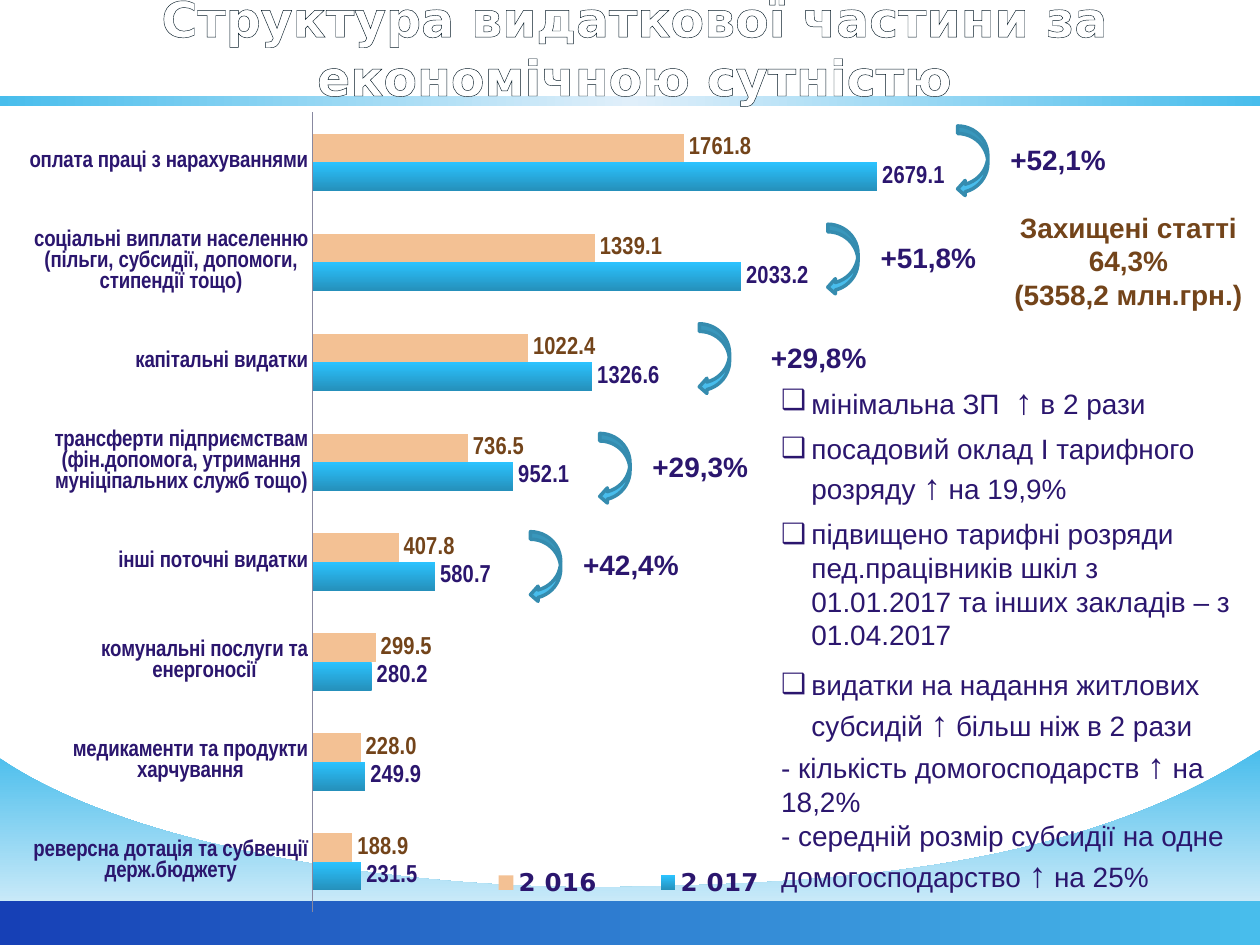
"""Build the slide on the structure of expenditure by economic nature."""
from dataclasses import dataclass

from lxml import etree
from pptx import Presentation
from pptx import util as u
from pptx.chart.data import CategoryChartData
from pptx.dml.color import RGBColor
from pptx.enum import chart as ch, shapes, text
from pptx.oxml.ns import qn


@dataclass(frozen=True)
class Theme:
    """Colours, fonts and type sizes."""
    navy: str = "2B166E"
    brown: str = "73441A"
    sky: str = "48BDEC"
    pale: str = "EEF6FC"
    mist: str = "E0EFFA"
    royal: str = "1640B6"
    peach: str = "F3C194"
    bar_top: str = "2BC3FF"
    bar_bottom: str = "2590BB"
    teal: str = "358CAF"
    axis: str = "8888A0"
    white: str = "FFFFFF"
    ink: str = "051925"
    sans: str = "Arial"
    narrow: str = "Arial Narrow"
    display: str = "DejaVu Sans"
    title: int = 28
    text: int = 16
    arrow: int = 20
    value: int = 14
    category: int = 13


@dataclass(frozen=True)
class Growth:
    """A growth rate with its curved arrow."""
    rate: str
    left: float
    top: float
    gap: float = 0.48


@dataclass(frozen=True)
class Item:
    """A paragraph of the list of reasons."""
    words: str
    bullet: bool = True
    before: float = 0


T = Theme()
GROWTHS = [
    Growth("+52,1%", 7.44, 1.16),
    Growth("+51,8%", 6.41, 1.94),
    Growth("+29,8%", 5.39, 2.73, 0.63),
    Growth("+29,3%", 4.6, 3.6),
    Growth("+42,4%", 4.05, 4.38),
]
ITEMS = [
    Item("мінімальна ЗП  ↑ в 2 рази"),
    Item("посадовий оклад І тарифного розряду ↑ на 19,9%", before=5.75),
    Item("підвищено тарифні розряди пед.працівників шкіл з 01.01.2017 "
         "та інших закладів – з 01.04.2017", before=5.75),
    Item("видатки на надання житлових субсидій ↑ більш ніж в 2 рази", before=9.2),
    Item("- кількість домогосподарств ↑ на 18,2%", False),
    Item("- середній розмір субсидії на одне домогосподарство ↑ на 25%", False),
]
SPENDING = [
    ("реверсна дотація та субвенції держ.бюджету", 231.5, 188.9),
    ("медикаменти та продукти харчування", 249.9, 228.0),
    ("комунальні послуги та енергоносії", 280.2, 299.5),
    ("інші поточні видатки", 580.7, 407.8),
    ("трансферти підприємствам (фін.допомога, утримання муніціпальних служб тощо)", 952.1, 736.5),
    ("капітальні видатки", 1326.6, 1022.4),
    ("соціальні виплати населенню (пільги, субсидії, допомоги, стипендії тощо)", 2033.2, 1339.1),
    ("оплата праці з нарахуваннями", 2679.1, 1761.8),
]


def rgb(code: str) -> RGBColor:
    """Turn a hex code into a colour."""
    return RGBColor.from_string(code)


def style(font, size: float, color: str, name: str, bold: bool = False) -> None:
    """Format a font."""
    font.size, font.name, font.bold = u.Pt(size), name, bold
    font.color.rgb = rgb(color)


def add_run(p, words: str, size: float, color: str, name: str = T.sans, bold: bool = False):
    """Add one formatted run."""
    r = p.add_run()
    r.text = words
    style(r.font, size, color, name, bold)
    return r


def shade(fill, host, colors: list[str], down: bool = False) -> None:
    """Give a fill evenly spaced gradient stops."""
    fill.gradient()
    fill.gradient_angle = 270 if down else 0
    stops = next(host.iter(qn("a:gsLst")))
    for old in list(stops):
        stops.remove(old)
    for i, color in enumerate(colors):
        gs = etree.SubElement(stops, qn("a:gs"), pos=str(100000 * i // (len(colors) - 1)))
        etree.SubElement(gs, qn("a:srgbClr"), val=color)


def place(sp, left: float, top: float, width: float, height: float) -> None:
    """Set the frame of a shape."""
    sp.left, sp.top = u.Inches(left), u.Inches(top)
    sp.width, sp.height = u.Inches(width), u.Inches(height)


def bezier(a, b, c, d, steps: int = 40) -> list[tuple[float, float]]:
    """Sample a cubic curve after its start point."""
    ts = [i / steps for i in range(1, steps + 1)]
    return [tuple((1 - t) ** 3 * a[k] + 3 * t * (1 - t) ** 2 * b[k]
                  + 3 * t * t * (1 - t) * c[k] + t ** 3 * d[k] for k in (0, 1)) for t in ts]


def add_band(s, top: float, height: float, colors: list[str]) -> None:
    """Draw a full-width gradient band."""
    sp = s.shapes.add_shape(shapes.MSO_SHAPE.RECTANGLE, 0, u.Inches(top), u.Inches(10), u.Inches(height))
    sp.shadow.inherit = False
    sp.line.fill.background()
    shade(sp.fill, sp.element, colors)


def add_backdrop(s) -> None:
    """Draw the wave and the two bands."""
    right, middle, left = (10, 5.95), (4.92, 7.04), (0, 6.02)
    points = [right, *bezier(right, (8.49, 6.95), (6.42, 7.01), middle),
              *bezier(middle, (3.42, 7.07), (1.11, 6.78), left), (0, 7.5)]
    fb = s.shapes.build_freeform(u.Inches(10), u.Inches(7.5), scale=1.0)
    fb.add_line_segments([(u.Inches(x), u.Inches(y)) for x, y in points])
    sp = fb.convert_to_shape()
    sp.shadow.inherit = False
    sp.line.fill.background()
    shade(sp.fill, sp.element, [T.sky, T.pale], down=True)
    add_band(s, 7.15, 0.35, [T.royal, T.sky])
    add_band(s, 0.76, 0.08, [T.sky, T.mist, T.sky])


def set_layout(host, x: float, y: float, w: float, h: float, inner: bool = False) -> None:
    """Place a chart part by fractions of the chart."""
    for old in host.findall(qn("c:layout")):
        host.remove(old)
    layout = etree.Element(qn("c:layout"))
    manual = etree.SubElement(layout, qn("c:manualLayout"))
    values = [("layoutTarget", "inner")] if inner else []
    values += [("xMode", "edge"), ("yMode", "edge"), ("x", x), ("y", y), ("w", w), ("h", h)]
    for tag, value in values:
        etree.SubElement(manual, qn(f"c:{tag}"), val=str(value))
    host.insert(0 if inner else 1, layout)


def add_spending_chart(s) -> None:
    """Draw the bars of both years."""
    names, now, before = zip(*SPENDING)
    data = CategoryChartData(number_format="0.0")
    data.categories = names
    data.add_series("2 017", now)
    data.add_series("2 016", before)
    chart = s.shapes.add_chart(ch.XL_CHART_TYPE.BAR_CLUSTERED, u.Inches(0.12), u.Inches(0.76),
                               u.Inches(7.38), u.Inches(6.61), data).chart
    style(chart.font, 18, T.navy, T.display)
    chart.has_title = False
    value, category = chart.value_axis, chart.category_axis
    value.minimum_scale, value.maximum_scale = 0, 3000
    value.has_major_gridlines = value.visible = False
    category.major_tick_mark = ch.XL_TICK_MARK.NONE
    category.format.line.color.rgb = rgb(T.axis)
    style(category.tick_labels.font, T.category, T.navy, T.narrow, True)
    plot = chart.plots[0]
    plot.gap_width, plot.overlap, plot.vary_by_categories = 150, 0, False
    for series, color in zip(plot.series, (T.navy, T.brown)):
        labels = series.data_labels
        labels.show_value = True
        labels.number_format, labels.number_format_is_linked = "0.0", False
        labels.position = ch.XL_LABEL_POSITION.OUTSIDE_END
        style(labels.font, T.value, color, T.narrow, True)
    current, previous = plot.series
    shade(current.format.fill, current._element, [T.bar_top, T.bar_bottom], down=True)
    previous.format.fill.solid()
    previous.format.fill.fore_color.rgb = rgb(T.peach)
    chart.has_legend = True
    legend = chart.legend
    legend.position, legend.include_in_layout = ch.XL_LEGEND_POSITION.TOP, False
    style(legend.font, T.value, T.navy, T.display, True)
    set_layout(next(chart.element.iter(qn("c:plotArea"))), 0.32, 0.02, 0.68, 0.96, inner=True)
    set_layout(legend.element if hasattr(legend, "element") else legend._element, 0.46, 0.92, 0.4, 0.05)


def add_label(s, left: float, top: float, width: float, height: float, lines: list[str],
              color: str, align) -> None:
    """Add a bold text box."""
    sp = s.shapes.add_textbox(0, 0, 0, 0)
    place(sp, left, top, width, height)
    tf = sp.text_frame
    tf.word_wrap = True
    for i, line in enumerate(lines):
        p = tf.add_paragraph() if i else tf.paragraphs[0]
        p.alignment = align
        add_run(p, line, T.text, color, bold=True)


def add_growth(s, growth: Growth) -> None:
    """Draw a curved arrow and its rate."""
    sp = s.shapes.add_shape(shapes.MSO_SHAPE.CURVED_DOWN_ARROW, 0, 0, 0, 0)
    place(sp, growth.left, growth.top, 0.56, 0.24)
    sp.rotation = 90
    sp.shadow.inherit = False
    sp.fill.solid()
    sp.fill.fore_color.rgb = rgb(T.sky)
    sp.line.color.rgb = rgb(T.teal)
    sp.line.width = u.Pt(2)
    add_label(s, growth.left + growth.gap, growth.top - 0.08, 1.02, 0.37, [growth.rate],
              T.navy, text.PP_ALIGN.LEFT)


def fill_title(sp) -> None:
    """Write the outlined title."""
    place(sp, 0.23, 0, 9.61, 0.84)
    tf = sp.text_frame
    tf.margin_left = tf.margin_right = tf.margin_bottom = 0
    tf.vertical_anchor, tf.auto_size = text.MSO_ANCHOR.BOTTOM, text.MSO_AUTO_SIZE.NONE
    p = tf.paragraphs[0]
    p.alignment = text.PP_ALIGN.CENTER
    r = add_run(p, "Структура видаткової частини за економічною сутністю", T.title, T.white, T.display, True)
    ln = etree.Element(qn("a:ln"), w=str(u.Pt(0.75)))
    etree.SubElement(etree.SubElement(ln, qn("a:solidFill")), qn("a:srgbClr"), val=T.ink)
    r.font._element.insert(0, ln)


def fill_reasons(sp) -> None:
    """Write the list of reasons."""
    place(sp, 6.1, 2.96, 3.78, 4.2)
    tf = sp.text_frame
    tf.vertical_anchor, tf.auto_size = text.MSO_ANCHOR.TOP, text.MSO_AUTO_SIZE.NONE
    for i, item in enumerate(ITEMS):
        p = tf.add_paragraph() if i else tf.paragraphs[0]
        p.space_before = u.Pt(item.before)
        pPr = p._p.get_or_add_pPr()
        hang = u.Inches(0.24) if item.bullet else 0
        pPr.set("marL", str(hang))
        pPr.set("indent", str(-hang))
        if item.bullet:
            etree.SubElement(pPr, qn("a:buFont"), typeface=T.sans)
            etree.SubElement(pPr, qn("a:buChar"), char="❑")
        else:
            etree.SubElement(pPr, qn("a:buNone"))
        for part in filter(None, item.words.partition("↑")):
            rise = part == "↑"
            add_run(p, part, T.arrow if rise else T.text, T.navy, bold=rise)


def main() -> None:
    """Build and save the slide."""
    prs = Presentation()
    prs.slide_width, prs.slide_height = u.Inches(10), u.Inches(7.5)
    s = prs.slides.add_slide(prs.slide_layouts[1])
    title, body = s.placeholders[0], s.placeholders[1]
    add_backdrop(s)
    add_spending_chart(s)
    fill_title(title)
    fill_reasons(body)
    for sp in (title, body):
        s.shapes.element.append(sp.element)
    for growth in GROWTHS:
        add_growth(s, growth)
    add_label(s, 7.91, 1.62, 2.09, 0.91, ["Захищені статті 64,3%", "(5358,2 млн.грн.)"],
              T.brown, text.PP_ALIGN.CENTER)
    prs.save("out.pptx")


if __name__ == "__main__":
    main()
